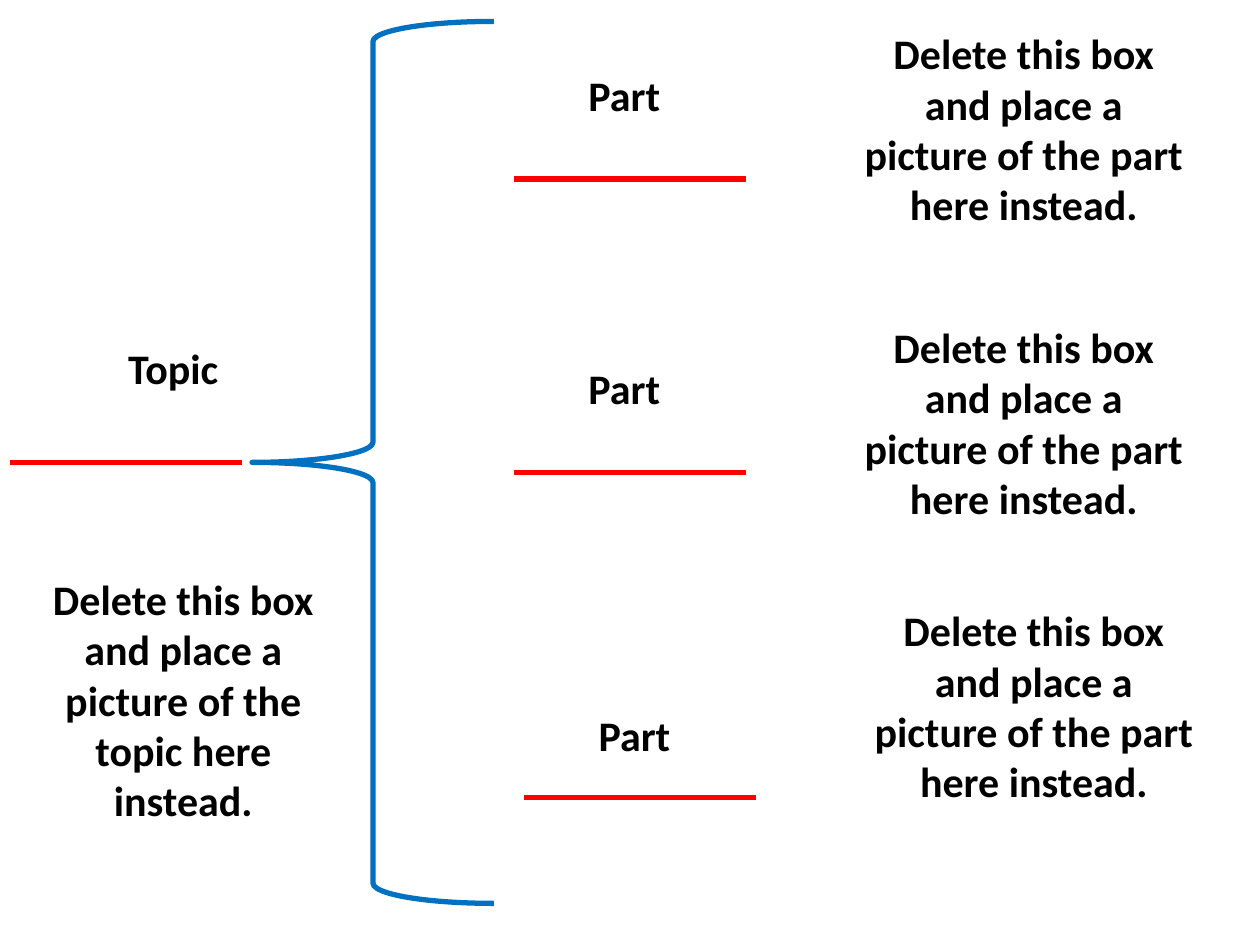
from dataclasses import dataclass

from pptx import Presentation
from pptx.dml.color import RGBColor as RGB
from pptx.enum.shapes import MSO_CONNECTOR as Conn, MSO_SHAPE as Shape
from pptx.enum.text import MSO_AUTO_SIZE as Fit, PP_ALIGN as Align
from pptx.oxml.ns import qn
from pptx.slide import Slide
from pptx.util import Inches, Pt
from lxml.etree import SubElement


@dataclass(frozen=True)
class Theme:
    font: str = "Calibri"
    size: int = 24
    ink: RGB = RGB(0, 0, 0)
    brace: RGB = RGB(0x00, 0x70, 0xC0)
    rule: RGB = RGB(0xFF, 0, 0)
    line: int = 3


@dataclass(frozen=True)
class Part:
    shift: float  # offset of the whole row to the right
    label: float  # top of the label
    rule: float   # height of the red rule
    note: float   # top of the picture note


THEME = Theme()
WIDTH = 2.75  # every text box
RULE = 1.84   # every red rule
PARTS = [
    Part(0, 0.5, 1.42, 0.17),
    Part(0, 2.83, 3.75, 2.5),
    Part(0.08, 5.58, 6.33, 4.75),
]


def add_text(slide: Slide, text: str, *, left: float, top: float,
             high: float = 0.5, size: int = THEME.size, bold: bool = True,
             color: RGB = THEME.ink, align: Align = Align.CENTER) -> None:
    box = slide.shapes.add_textbox(
        Inches(left), Inches(top), Inches(WIDTH), Inches(high))
    frame = box.text_frame
    frame.word_wrap = True
    frame.auto_size = Fit.SHAPE_TO_FIT_TEXT
    para = frame.paragraphs[0]
    para.alignment = align
    run = para.add_run()
    run.text = text
    font = run.font
    font.name, font.size, font.bold = THEME.font, Pt(size), bold
    font.color.rgb = color


def add_note(slide: Slide, noun: str, left: float, top: float,
             high: float) -> None:
    add_text(slide, f"Delete this box and place a picture of the {noun} here instead.",
             left=left, top=top, high=high)


def add_rule(slide: Slide, left: float, top: float) -> None:
    rule = slide.shapes.add_connector(
        Conn.STRAIGHT, Inches(left), Inches(top), Inches(left + RULE), Inches(top))
    rule.line.color.rgb = THEME.rule
    rule.line.width = Pt(THEME.line)
    SubElement(rule._element.spPr, qn("a:effectLst"))


def add_brace(slide: Slide) -> None:
    brace = slide.shapes.add_shape(
        Shape.LEFT_BRACE, Inches(2), Inches(0.17), Inches(1.92), Inches(7))
    brace.shadow.inherit = False
    brace.fill.background()
    brace.line.color.rgb = THEME.brace
    brace.line.width = Pt(THEME.line)


def main() -> None:
    deck = Presentation()
    deck.slide_width, deck.slide_height = Inches(10), Inches(7.5)
    slide = deck.slides.add_slide(deck.slide_layouts[6])

    # Topic on the left, opening into the brace
    add_brace(slide)
    add_rule(slide, 0.08, 3.67)
    add_text(slide, "Topic", left=0, top=2.67)
    add_note(slide, "topic", 0.08, 4.5, 2.12)

    # Parts on the right, one row each
    for part in PARTS:
        add_rule(slide, 4.08 + part.shift, part.rule)
        add_text(slide, "Part", left=3.58 + part.shift, top=part.label)
        add_note(slide, "part", 6.75 + part.shift, part.note, 1.72)

    deck.save("out.pptx")


if __name__ == "__main__":
    main()
